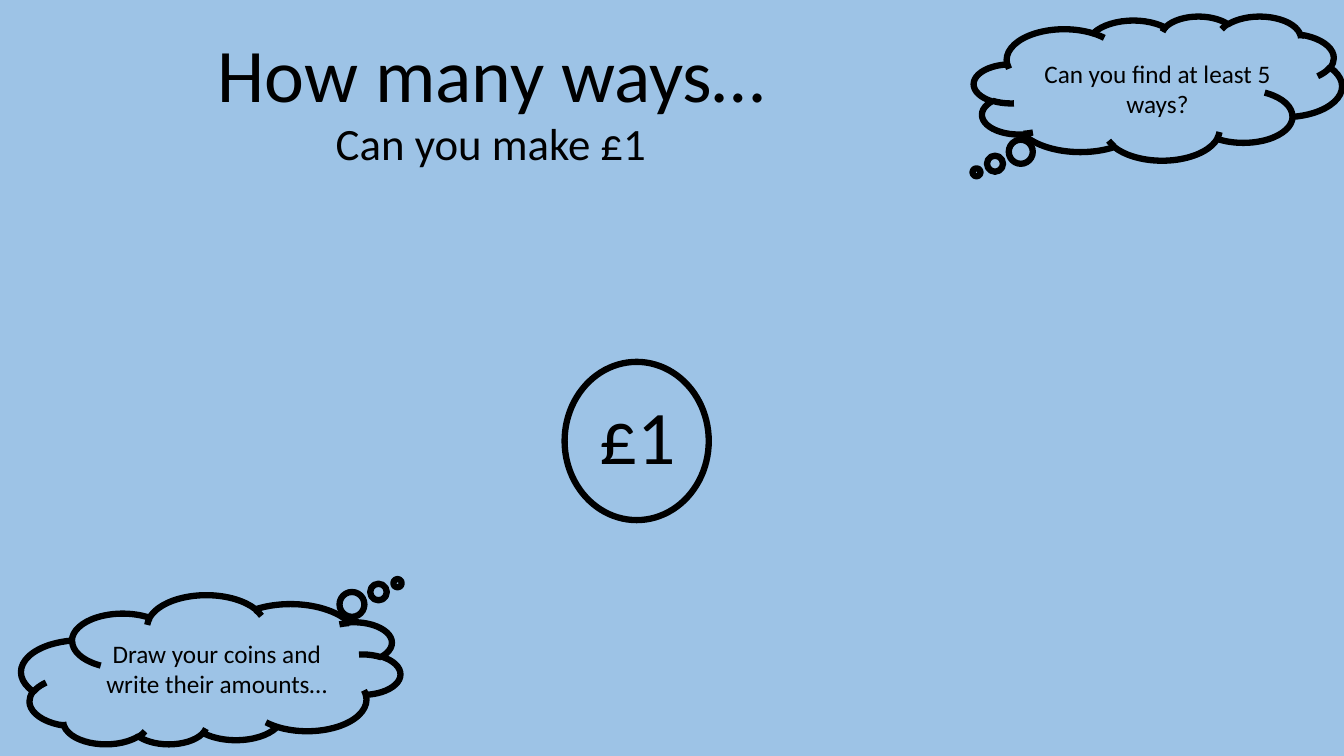
from pptx import Presentation
from pptx.dml.color import RGBColor
from pptx.enum.shapes import MSO_SHAPE
from pptx.enum.text import MSO_ANCHOR, MSO_AUTO_SIZE, PP_ALIGN
from pptx.oxml.ns import qn
from pptx.util import Inches, Pt

BLACK = "000000"
SKY = "9DC3E6"


def color(hex_code):
    return RGBColor.from_string(hex_code)


def place(sp, box):
    sp.left, sp.top, sp.width, sp.height = (Inches(v) for v in box)


def write(sp, text, size=18, wrap=False, font="Calibri", fill=BLACK):
    tf = sp.text_frame
    tf.word_wrap = wrap
    tf.auto_size = MSO_AUTO_SIZE.NONE
    tf.vertical_anchor = MSO_ANCHOR.TOP
    p = tf.paragraphs[0]
    p.alignment = PP_ALIGN.CENTER
    p.line_spacing = 1.0
    r = p.add_run()
    r.text = text
    r.font.name = font
    r.font.size = Pt(size)
    r.font.color.rgb = color(fill)


def add_text(s, box, text, **fmt):
    sp = s.shapes.add_textbox(*(Inches(v) for v in box))
    write(sp, text, **fmt)


def add_outline(s, kind, box):
    sp = s.shapes.add_shape(kind, *(Inches(v) for v in box))
    sp.shadow.inherit = False
    sp.fill.background()
    sp.line.color.rgb = color(BLACK)
    sp.line.width = Pt(4.5)
    return sp


def add_heading(s, box, title, question):
    x, y, w, h = box
    place(s.shapes.title, (x, y, w, 1.01))
    write(s.shapes.title, title, size=54)
    add_text(s, (x, y + 0.88, w, h - 0.88), question, size=32)


def add_thought(s, box, text, text_offset, flipped=False):
    """Cloud with its bubbles at the lower left, or at the upper right if flipped."""
    x, y, w, h = box
    dx, dy = text_offset
    sp = add_outline(s, MSO_SHAPE.CLOUD_CALLOUT, box)
    sp.adjustments[0], sp.adjustments[1] = -0.493, 0.584
    if flipped:
        xfrm = sp._element.spPr.find(qn("a:xfrm"))
        xfrm.set("flipH", "1")
        xfrm.set("flipV", "1")
    add_text(s, (x + dx, y + dy, 2.7, 0.71), text, wrap=True)


def add_coin(s, box, amount):
    x, y, w, h = box
    add_outline(s, MSO_SHAPE.OVAL, box)
    add_text(s, (x + 0.24, y + 0.22, 0.97, 1.01), amount, size=54)


def main():
    prs = Presentation()
    prs.slide_width, prs.slide_height = Inches(13.33), Inches(7.5)
    s = prs.slides.add_slide(prs.slide_layouts[5])
    s.background.fill.solid()
    s.background.fill.fore_color.rgb = color(SKY)

    add_heading(s, (2, 0.22, 5.74, 1.52), "How many ways…", "Can you make £1")
    add_thought(s, (9.66, 0.16, 3.65, 1.43), "Can you find at least 5 ways?",
                (0.47, 0.37))
    add_thought(s, (0.21, 5.91, 3.76, 1.48),
                "Draw your coins and write their amounts…",
                (0.59, 0.37), flipped=True)
    add_coin(s, (5.6, 3.59, 1.43, 1.57), "£1")
    prs.save("out.pptx")


if __name__ == "__main__":
    main()
